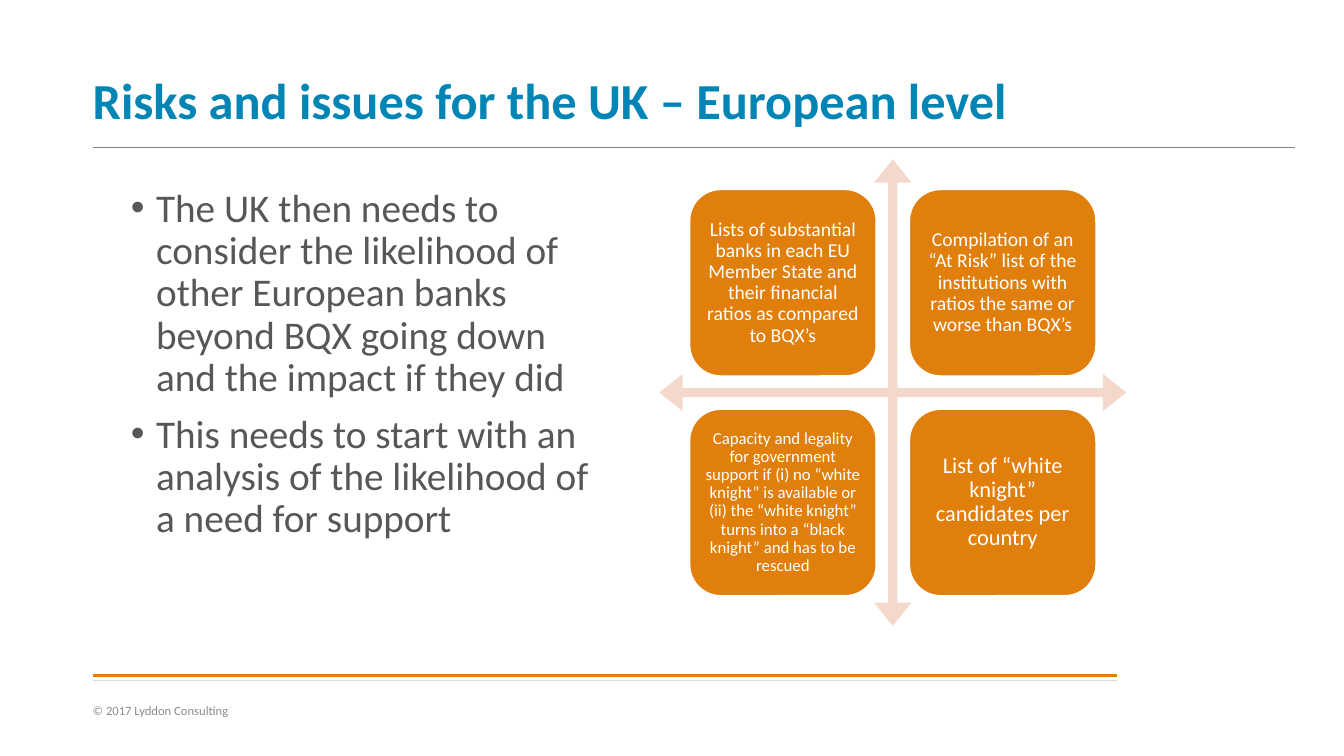
from dataclasses import dataclass

from lxml import etree
from pptx import Presentation
from pptx.dml.color import RGBColor
from pptx.enum.shapes import MSO_CONNECTOR, MSO_SHAPE
from pptx.enum.text import MSO_ANCHOR, PP_ALIGN
from pptx.oxml.ns import qn
from pptx.util import Inches, Pt


@dataclass(frozen=True)
class Theme:
    font: str = "Calibri"
    title: str = "0085B4"
    body: str = "575756"
    footer: str = "8C8C8C"
    accent: str = "E17F0C"
    arrow: str = "F4D8CC"
    white: str = "FFFFFF"
    rule: str = "808080"
    pale_rule: str = "D6DCE5"
    title_size: int = 36
    body_size: int = 28
    footer_size: int = 9


THEME = Theme()

BULLETS = [
    "The UK then needs to consider the likelihood of other European banks "
    "beyond BQX going down and the impact if they did",
    "This needs to start with an analysis of the likelihood of a need for support",
]

# Quadrants in reading order: text, size in points, inset in inches
QUADRANTS = [
    ("Lists of substantial banks in each EU Member State and their financial "
     "ratios as compared to BQX’s", 14, 0.06),
    ("Compilation of an “At Risk” list of the institutions with ratios the same "
     "or worse than BQX’s", 14, 0.06),
    ("Capacity and legality for government support if (i) no “white knight” is "
     "available or (ii) the “white knight” turns into a “black knight” and has "
     "to be rescued", 12, 0.05),
    ("List of “white knight” candidates per country", 16, 0.07),
]


def color(hex_value):
    return RGBColor.from_string(hex_value)


def set_frame(tf, anchor, inset_x, inset_y):
    tf.word_wrap = True
    tf.vertical_anchor = anchor
    tf.margin_left = tf.margin_right = Inches(inset_x)
    tf.margin_top = tf.margin_bottom = Inches(inset_y)


def add_run(p, text, size, hex_value, bold=False):
    r = p.add_run()
    r.text = text
    r.font.name = THEME.font
    r.font.size = Pt(size)
    r.font.bold = bold
    r.font.color.rgb = color(hex_value)


def add_rule(s, y, right, hex_value, width):
    left = 0.92
    line = s.shapes.add_connector(
        MSO_CONNECTOR.STRAIGHT, Inches(left), Inches(y), Inches(right), Inches(y))
    line.line.color.rgb = color(hex_value)
    line.line.width = Pt(width)
    etree.SubElement(line._element.spPr, qn("a:effectLst"))


def add_label(s, box, text, size, hex_value, inset_y=0, bold=False, spacing=1.0):
    tf = s.shapes.add_textbox(*map(Inches, box)).text_frame
    set_frame(tf, MSO_ANCHOR.MIDDLE, 0, inset_y)
    p = tf.paragraphs[0]
    p.line_spacing = spacing
    add_run(p, text, size, hex_value, bold)


def add_bullets(s, box, items):
    tf = s.shapes.add_textbox(*map(Inches, box)).text_frame
    set_frame(tf, MSO_ANCHOR.TOP, 0.1, 0.05)
    for i, text in enumerate(items):
        p = tf.paragraphs[0] if i == 0 else tf.add_paragraph()
        p.line_spacing = 0.9
        p.space_before = Pt(10 if i else 0)
        pPr = p._p.get_or_add_pPr()
        pPr.set("marL", str(Inches(0.25)))
        pPr.set("indent", str(Inches(-0.25)))
        etree.SubElement(pPr, qn("a:buFont")).set("typeface", "Arial")
        etree.SubElement(pPr, qn("a:buChar")).set("char", "•")
        add_run(p, text, THEME.body_size, THEME.body)


def add_filled(s, preset, box, hex_value):
    sp = s.shapes.add_shape(preset, *map(Inches, box))
    sp.shadow.inherit = False
    sp.fill.solid()
    sp.fill.fore_color.rgb = color(hex_value)
    sp.line.fill.background()
    return sp


def add_quadrant(s, box, text, size, inset):
    sp = add_filled(s, MSO_SHAPE.ROUNDED_RECTANGLE, box, THEME.accent)
    sp.line.color.rgb = color(THEME.white)
    sp.line.width = Pt(1)
    set_frame(sp.text_frame, MSO_ANCHOR.MIDDLE, inset, inset)
    p = sp.text_frame.paragraphs[0]
    p.alignment = PP_ALIGN.CENTER
    p.line_spacing = 0.9
    add_run(p, text, size, THEME.white)


def add_matrix(s, left, top, size):
    arrow = add_filled(s, MSO_SHAPE.QUAD_ARROW, (left, top, size, size), THEME.arrow)
    for i, value in enumerate((0.02, 0.04, 0.05)):
        arrow.adjustments[i] = value
    margin, side, pitch = 0.3, 1.85, 2.18
    for i, quadrant in enumerate(QUADRANTS):
        row, col = divmod(i, 2)
        box = (left + margin + col * pitch, top + margin + row * pitch, side, side)
        add_quadrant(s, box, *quadrant)


def main():
    prs = Presentation()
    prs.slide_width, prs.slide_height = Inches(13.33), Inches(7.5)
    s = prs.slides.add_slide(prs.slide_layouts[6])

    # Rules and footer
    add_rule(s, 1.46, 12.84, THEME.rule, 0.75)
    add_rule(s, 6.7, 11.08, THEME.accent, 2.5)
    add_rule(s, 6.75, 11.08, THEME.pale_rule, 1)
    add_label(s, (0.92, 6.85, 2.3, 0.4), "© 2017 Lyddon Consulting",
              THEME.footer_size, THEME.footer)

    # Title
    add_label(s, (0.92, 0.65, 10.16, 0.75),
              "Risks and issues for the UK – European level",
              THEME.title_size, THEME.title, inset_y=0.05, bold=True, spacing=0.9)

    # Four-way matrix and bullets
    add_matrix(s, 6.54, 1.58, 4.63)
    add_bullets(s, (1.2, 1.82, 4.81, 4.63), BULLETS)

    prs.save("out.pptx")


if __name__ == "__main__":
    main()
